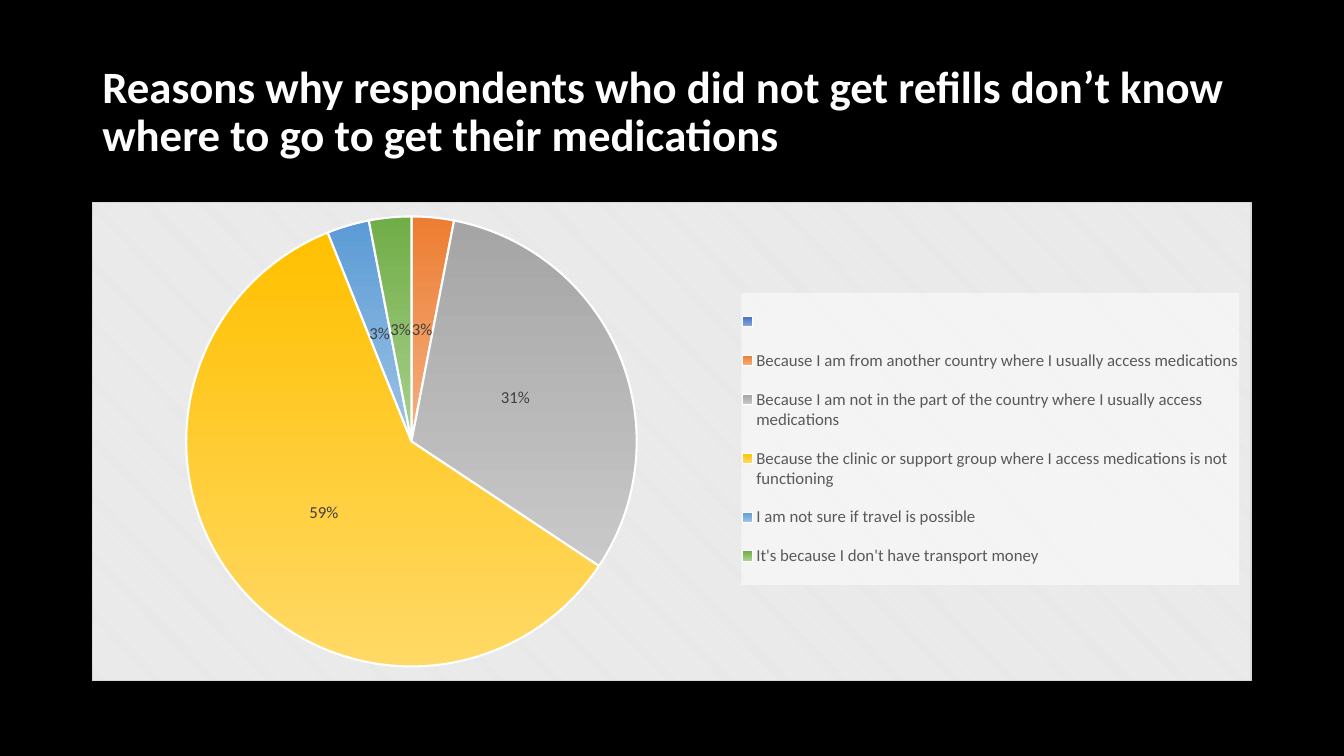
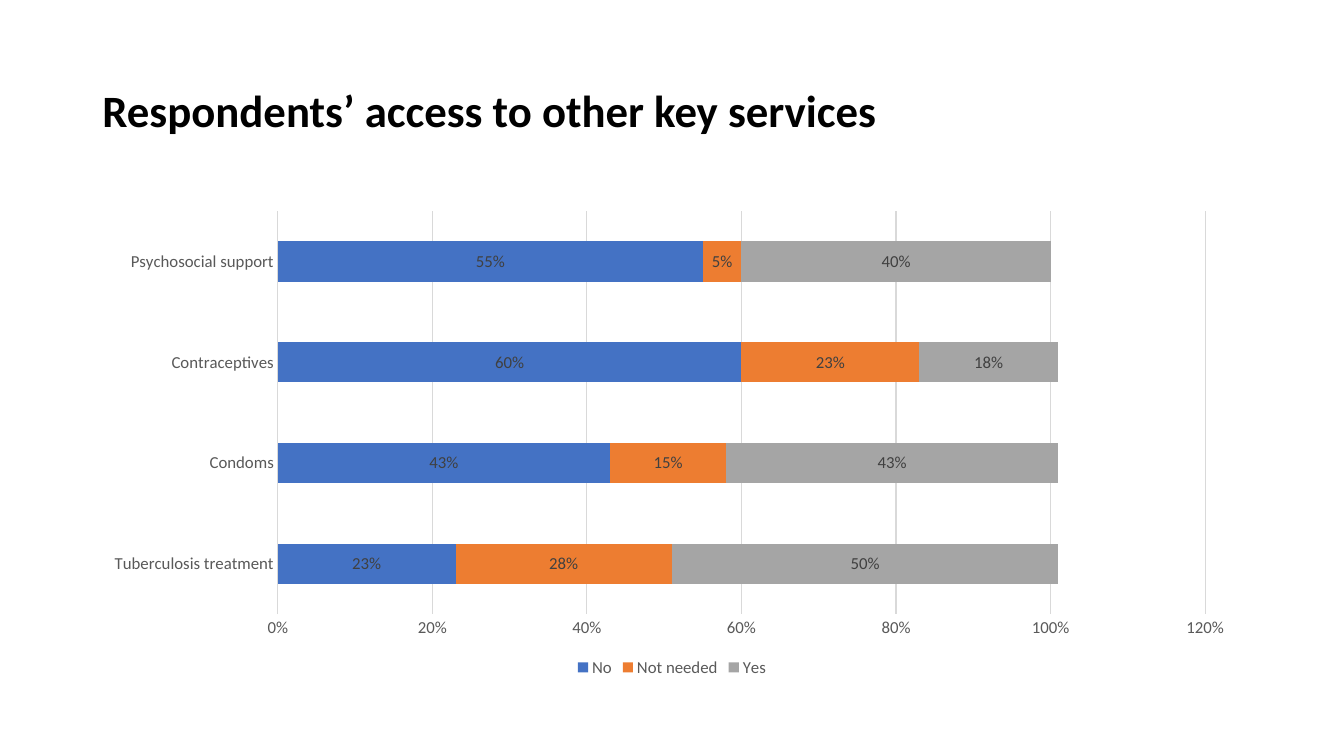
from lxml import etree
from pptx import Presentation
from pptx.chart.data import CategoryChartData
from pptx.dml.color import RGBColor
from pptx.enum.chart import XL_CHART_TYPE as CT
from pptx.enum.chart import XL_LABEL_POSITION as LABEL_POS
from pptx.enum.chart import XL_LEGEND_POSITION as LEGEND_POS
from pptx.enum.chart import XL_TICK_MARK as TICK
from pptx.enum.text import MSO_ANCHOR
from pptx.oxml import parse_xml
from pptx.oxml.ns import nsdecls, qn
from pptx.util import Cm, Pt

BLACK, WHITE = "000000", "FFFFFF"
GREY_TEXT, LABEL_TEXT, RULE = "595959", "404040", "D9D9D9"


def rgb(value):
    return RGBColor.from_string(value)


def shape_properties(inner):
    return parse_xml(f'<c:spPr {nsdecls("c", "a")}>{inner}</c:spPr>')


def solid(value, alpha=100):
    return (f'<a:solidFill><a:srgbClr val="{value}">'
            f'<a:alpha val="{alpha * 1000}"/></a:srgbClr></a:solidFill>')


def place(parent, index, box, inner=False):
    for old in parent.findall(qn("c:layout")):
        parent.remove(old)
    layout = parse_xml(f'<c:layout {nsdecls("c")}><c:manualLayout/></c:layout>')
    settings = [("layoutTarget", "inner")] if inner else []
    settings += [("xMode", "edge"), ("yMode", "edge"), *zip("xywh", box)]
    for name, value in settings:
        etree.SubElement(layout[0], qn(f"c:{name}")).set("val", str(value))
    parent.insert(index, layout)


class Deck:
    font = "Calibri"
    left, width = Cm(2.33), Cm(29.21)

    def __init__(self):
        self.prs = Presentation()
        self.prs.slide_width, self.prs.slide_height = Cm(33.87), Cm(19.05)
        self.s = None

    def style(self, font, size, color, bold=False):
        font.name, font.size, font.bold = self.font, Pt(size), bold
        font.color.rgb = rgb(color)

    def slide(self, background):
        self.s = self.prs.slides.add_slide(self.prs.slide_layouts[6])
        fill = self.s.background.fill
        fill.solid()
        fill.fore_color.rgb = rgb(background)

    def title(self, text, color):
        tf = self.s.shapes.add_textbox(self.left, Cm(1.01), self.width, Cm(3.68)).text_frame
        tf.word_wrap = True
        tf.vertical_anchor = MSO_ANCHOR.MIDDLE
        p = tf.paragraphs[0]
        p.text = text
        p.line_spacing = 0.9
        self.style(p.font, 32, color, bold=True)

    def chart(self, kind, categories, series, number_format, legend_position, plot_box):
        data = CategoryChartData(number_format=number_format)
        data.categories = categories
        for name, values in series:
            data.add_series(name, values)
        chart = self.s.shapes.add_chart(
            kind, self.left, Cm(5.08), self.width, Cm(12.09), data).chart
        self.style(chart.font, 10, GREY_TEXT)
        chart.has_title = False
        chart.has_legend = True
        chart.legend.position = legend_position
        chart.legend.include_in_layout = False
        self.style(chart.legend.font, 12, GREY_TEXT)
        plot = chart.plots[0]
        plot.has_data_labels = True
        labels = plot.data_labels
        labels.show_value, labels.show_percentage = True, False
        labels.number_format, labels.number_format_is_linked = number_format, False
        labels.position = LABEL_POS.CENTER
        self.style(labels.font, 12, LABEL_TEXT)
        place(chart.element.find(".//" + qn("c:plotArea")), 0, plot_box, inner=True)
        return chart

    def pie(self, categories, values, gradients):
        chart = self.chart(CT.PIE, categories, [("Series 1", values)], '0"%"',
                           LEGEND_POS.RIGHT, (0.08, 0.03, 0.39, 0.94))
        plot = chart.plots[0]
        plot.vary_by_categories = True
        for i, colors in enumerate(gradients):
            fmt = plot.series[0].points[i].format
            fmt.fill.gradient()
            fmt.fill.gradient_angle = 270
            for stop, color in zip(fmt.fill.gradient_stops, colors):
                stop.color.rgb = rgb(color)
            fmt.line.color.rgb = rgb(WHITE)
            fmt.line.width = Pt(1.5)
        chart.element.find(qn("c:chart")).addnext(shape_properties(
            f'<a:pattFill prst="dkDnDiag"><a:fgClr><a:srgbClr val="{WHITE}"/></a:fgClr>'
            '<a:bgClr><a:srgbClr val="E6E6E6"/></a:bgClr></a:pattFill>'
            f'<a:ln w="9525">{solid(RULE)}</a:ln>'))
        legend = chart.element.find(".//" + qn("c:legend"))
        place(legend, 1, (0.56, 0.19, 0.43, 0.61))
        legend.find(qn("c:overlay")).addnext(shape_properties(solid(WHITE, 50)))

    def stacked_bars(self, categories, series, colors):
        chart = self.chart(CT.BAR_STACKED, categories, series, "0%",
                           LEGEND_POS.BOTTOM, (0.16, 0.02, 0.8, 0.84))
        plot = chart.plots[0]
        plot.vary_by_categories = False
        plot.gap_width, plot.overlap = 150, 100
        for bars, color in zip(plot.series, colors):
            bars.format.fill.solid()
            bars.format.fill.fore_color.rgb = rgb(color)
        cat_axis, val_axis = chart.category_axis, chart.value_axis
        for axis in (cat_axis, val_axis):
            axis.major_tick_mark = axis.minor_tick_mark = TICK.NONE
            self.style(axis.tick_labels.font, 12, GREY_TEXT)
        val_axis.minimum_scale, val_axis.maximum_scale = 0, 1.2
        val_axis.major_unit = 0.2
        val_axis.tick_labels.number_format = "0%"
        val_axis.tick_labels.number_format_is_linked = False
        val_axis.format.line.fill.background()
        val_axis.has_major_gridlines = True
        for line in (cat_axis.format.line, val_axis.major_gridlines.format.line):
            line.color.rgb = rgb(RULE)
            line.width = Pt(0.75)


def main():
    deck = Deck()

    deck.slide(BLACK)
    deck.title("Reasons why respondents who did not get refills don’t know "
               "where to go to get their medications", WHITE)
    deck.pie(
        ["",
         "Because I am from another country where I usually access medications",
         "Because I am not in the part of the country where I usually access medications",
         "Because the clinic or support group where I access medications is not functioning",
         "I am not sure if travel is possible",
         "It's because I don't have transport money"],
        [None, 3, 31, 59, 3, 3],
        [("4472C4", "8FAADC"), ("ED7D31", "F4B183"), ("A5A5A5", "C9C9C9"),
         ("FFC000", "FFD966"), ("5B9BD5", "9DC3E6"), ("70AD47", "A9D18E")])

    deck.slide(WHITE)
    deck.title("Respondents’ access to other key services", BLACK)
    deck.stacked_bars(
        ["Tuberculosis treatment", "Condoms", "Contraceptives", "Psychosocial support"],
        [("No", [0.23, 0.43, 0.6, 0.55]),
         ("Not needed", [0.28, 0.15, 0.23, 0.05]),
         ("Yes", [0.5, 0.43, 0.18, 0.4])],
        ["4472C4", "ED7D31", "A5A5A5"])

    deck.prs.save("out.pptx")


if __name__ == "__main__":
    main()
